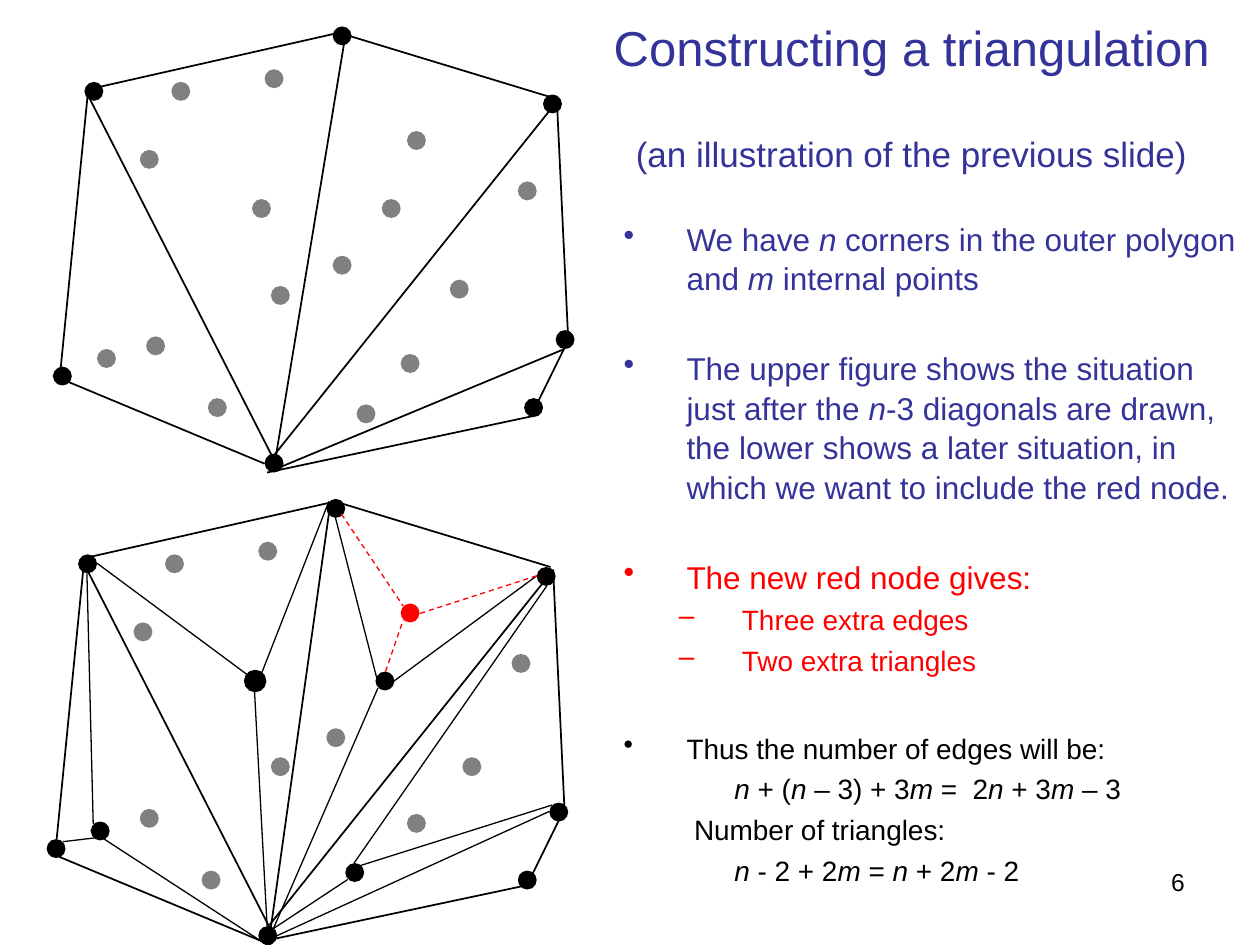
from pptx import Presentation
from pptx.dml.color import RGBColor
from pptx.enum.dml import MSO_LINE
from pptx.enum.shapes import MSO_CONNECTOR, MSO_SHAPE
from pptx.enum.text import MSO_ANCHOR, PP_ALIGN
from pptx.oxml.ns import qn
from pptx.util import Inches, Pt
from lxml import etree

BLACK = RGBColor(0x00, 0x00, 0x00)
GREY = RGBColor(0x80, 0x80, 0x80)
RED = RGBColor(0xFF, 0x00, 0x00)
BLUE = RGBColor(0x33, 0x33, 0x99)
OVAL = MSO_SHAPE.OVAL
STRAIGHT = MSO_CONNECTOR.STRAIGHT
DASH = MSO_LINE.DASH
CENTER, RIGHT = PP_ALIGN.CENTER, PP_ALIGN.RIGHT
MIDDLE = MSO_ANCHOR.MIDDLE
DOT = 0.15

# Points are left/top of a dot, edges are x1, y1, x2, y2; both relative to the figure.
CORNERS = [(4.31, 0.75), (4.41, 2.62), (4.16, 3.16), (2.64, 0.21),
           (0.67, 0.65), (0.42, 2.91), (2.1, 3.6)]
INNER = [(1.36, 0.65), (2.1, 0.55), (4.11, 1.44), (1.16, 2.67),
         (2.64, 2.03), (1.65, 3.16), (1.11, 1.19)]
UPPER_INNER = [(2.83, 3.21), (2.15, 2.27), (0.77, 2.77), (3.18, 2.81),
               (3.57, 2.22), (3.23, 1.04), (2, 1.58), (3.03, 1.58)]
LOWER_INNER = [(2.2, 2.26), (3.28, 2.71), (3.72, 2.26)]
JOINED = [(2.79, 3.1), (0.77, 2.77), (3.03, 1.58)]
HUB = (2, 1.58)
NEW = (3.23, 1.04)

FRAME = [(0.7, 0.71, 2.69, 0.26), (2.69, 0.26, 4.4, 0.78), (0.7, 0.71, 0.48, 2.94),
         (0.7, 0.76, 2.19, 3.68), (4.42, 0.8, 4.51, 2.7), (4.4, 0.83, 2.17, 3.62),
         (4.51, 2.7, 4.24, 3.25), (4.24, 3.3, 2.12, 3.75)]
UPPER_EDGES = [(2.19, 3.62, 2.73, 0.35), (0.42, 2.98, 2.1, 3.68), (4.48, 2.77, 2.17, 3.73)]
LOWER_EDGES = [(0.52, 3.05, 2.2, 3.75), (2.2, 3.61, 2.66, 0.33)]
THIN = [(2.71, 0.35, 3.05, 1.67), (4.31, 0.82, 3.13, 1.69), (3.05, 1.71, 2.22, 3.62),
        (0.74, 0.8, 0.79, 2.79), (0.55, 2.93, 0.89, 2.89), (2.17, 3.75, 0.77, 2.84),
        (0.82, 0.72, 2.02, 1.61), (2.66, 0.23, 2.12, 1.61), (2.07, 1.73, 2.17, 3.6),
        (2.22, 3.62, 2.81, 3.23), (4.39, 0.9, 2.86, 3.1), (4.41, 2.69, 2.24, 3.68),
        (2.91, 3.12, 4.43, 2.64)]
NEW_EDGES = [(2.76, 0.33, 3.25, 1.06), (4.31, 0.82, 3.38, 1.12), (3.11, 1.58, 3.25, 1.17)]

# Each entry: size, colour, bullet, margin, indent, space before, runs.
# Runs alternate between upright and italic.
NOTES = [
    (18, BLUE, "•", 0.5, -0.5, 3.6,
     ["We have ", "n", " corners in the outer polygon and ", "m", " internal points"]),
    (18, BLUE, "•", 0.5, -0.5, 28.5,
     ["The upper figure shows the situation just after the ", "n",
      "-3 diagonals are drawn,\nthe lower shows a later situation, in which we want "
      "to include the red node."]),
    (18, RED, "•", 0.5, -0.5, 28.5, ["The new red node gives:"]),
    (16, RED, "–", 0.94, -0.5, 3.2, ["Three extra edges"]),
    (16, RED, "–", 0.94, -0.5, 3.2, ["Two extra triangles"]),
    (16, BLACK, "•", 0.5, -0.5, 30, ["Thus the number of edges will be:"]),
    (16, BLACK, None, 0.88, 0, 3.2,
     ["", "n", " + (", "n", " – 3) + 3", "m", " =  2", "n", " + 3", "m", " – 3"]),
    (16, BLACK, None, 0.56, 0, 3.2, ["Number of triangles:"]),
    (16, BLACK, None, 0.88, 0, 3.2,
     ["", "n", " - 2 + 2", "m", " = ", "n", " + 2", "m", " - 2"]),
]


def add_dots(slide, x, y, spots, color, rim=0):
    for left, top in spots:
        dot = slide.shapes.add_shape(OVAL, Inches(x + left), Inches(y + top),
                                     Inches(DOT), Inches(DOT))
        dot.shadow.inherit = False
        dot.fill.solid()
        dot.fill.fore_color.rgb = color
        if rim:
            dot.line.color.rgb = color
            dot.line.width = Pt(rim)
        else:
            dot.line.fill.background()


def add_edges(slide, x, y, edges, width, color=BLACK, dash=None):
    for x1, y1, x2, y2 in edges:
        edge = slide.shapes.add_connector(STRAIGHT, Inches(x + x1), Inches(y + y1),
                                          Inches(x + x2), Inches(y + y2))
        edge.line.color.rgb = color
        edge.line.width = Pt(width)
        if dash:
            edge.line.dash_style = dash
        etree.SubElement(edge._element.spPr, qn("a:effectLst"))


def add_upper(slide, x, y):
    add_edges(slide, x, y, FRAME + UPPER_EDGES, 1)
    add_dots(slide, x, y, INNER + UPPER_INNER, GREY)
    add_dots(slide, x, y, CORNERS, BLACK)


def add_lower(slide, x, y):
    add_edges(slide, x + 0.02, y - 0.03, FRAME, 1)
    add_edges(slide, x, y, LOWER_EDGES, 1)
    add_dots(slide, x, y, INNER + LOWER_INNER, GREY)
    add_dots(slide, x, y, CORNERS + JOINED, BLACK)
    add_dots(slide, x, y, [HUB], BLACK, 2)
    add_dots(slide, x, y, [NEW], RED)
    add_edges(slide, x, y, THIN, 0.75)
    add_edges(slide, x, y, NEW_EDGES, 0.75, RED, DASH)


def add_box(slide, x, y, w, h):
    box = slide.shapes.add_textbox(Inches(x), Inches(y), Inches(w), Inches(h))
    box.text_frame.word_wrap = True
    return box.text_frame


def add_run(para, text, size, color, italic=False):
    run = para.add_run()
    run.text = text
    run.font.name = "Arial"
    run.font.size = Pt(size)
    run.font.color.rgb = color
    run.font.italic = italic


def add_title(slide, x, y, w, h):
    frame = add_box(slide, x, y, w, h)
    frame.vertical_anchor = MIDDLE
    head, sub = frame.paragraphs[0], frame.add_paragraph()
    head.alignment = sub.alignment = CENTER
    sub.space_before = Pt(32)
    add_run(head, "Constructing a triangulation", 28, BLUE)
    add_run(sub, "(an illustration of the previous slide)", 20, BLUE)


def add_notes(slide, x, y, w, h):
    frame = add_box(slide, x, y, w, h)
    for i, (size, color, mark, margin, indent, gap, runs) in enumerate(NOTES):
        para = frame.add_paragraph() if i else frame.paragraphs[0]
        para.space_before = Pt(gap)
        para.line_spacing = 1.05
        props = para._p.get_or_add_pPr()
        props.set("marL", str(Inches(margin)))
        props.set("indent", str(Inches(indent)))
        if mark:
            etree.SubElement(props, qn("a:buChar")).set("char", mark)
        for k, text in enumerate(runs):
            for j, part in enumerate(text.split("\n")):
                if j:
                    para.add_line_break()
                if part:
                    add_run(para, part, size, color, k % 2 == 1)


def add_number(slide, x, y, w, h):
    para = add_box(slide, x, y, w, h).paragraphs[0]
    para.alignment = RIGHT
    add_run(para, "6", 14, BLACK)


def main():
    deck = Presentation()
    deck.slide_width, deck.slide_height = Inches(10), Inches(7.5)
    slide = deck.slides.add_slide(deck.slide_layouts[6])
    add_title(slide, 4.75, 0.21, 4.97, 1.11)
    add_notes(slide, 4.85, 1.68, 5.15, 5.82)
    add_number(slide, 8.59, 6.83, 0.91, 0.52)
    add_upper(slide, 0, 0)
    add_lower(slide, -0.05, 3.75)
    deck.save("out.pptx")


if __name__ == "__main__":
    main()
